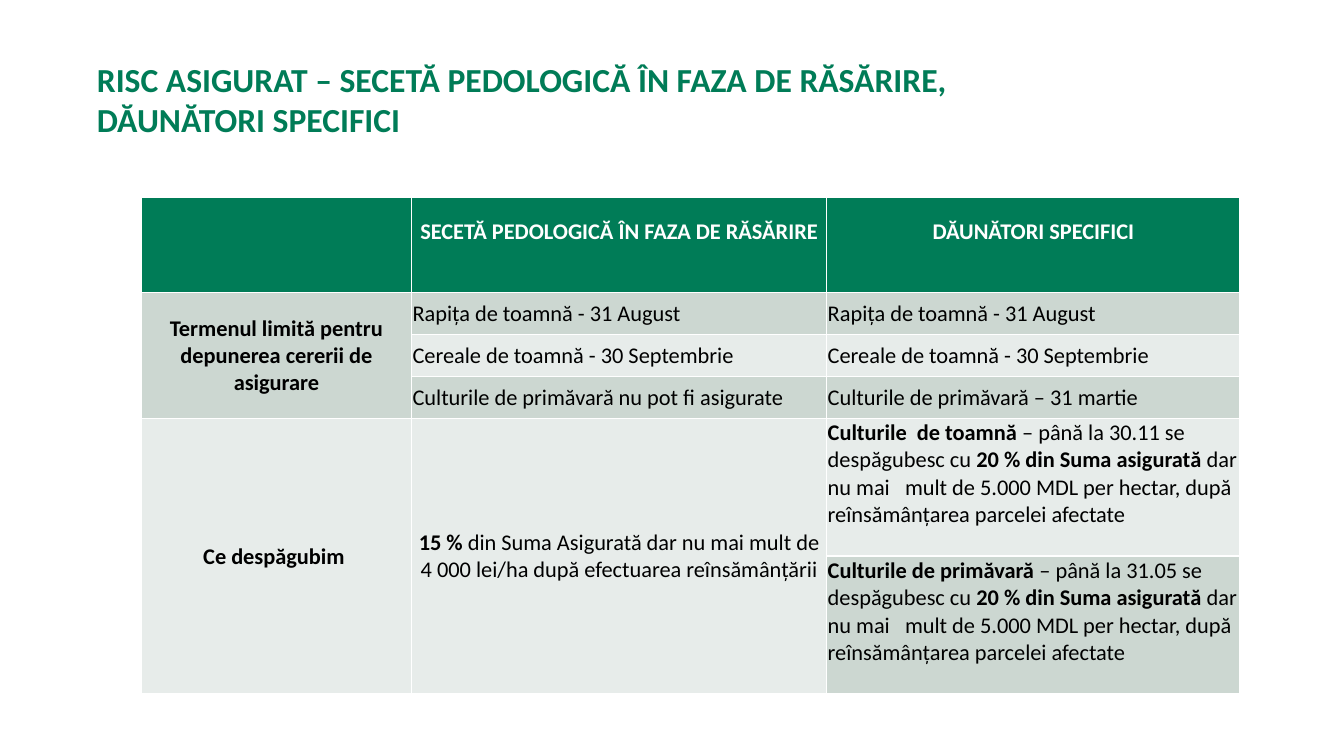
from dataclasses import dataclass

from pptx import Presentation
from pptx.dml.color import RGBColor
from pptx.enum.text import MSO_ANCHOR as Anchor, MSO_AUTO_SIZE as AutoSize, PP_ALIGN as Align
from pptx.util import Pt


@dataclass(frozen=True)
class Theme:
    font: str = "Calibri"
    green: RGBColor = RGBColor(0x00, 0x7C, 0x57)
    dark_band: RGBColor = RGBColor(0xCC, 0xD7, 0xD1)
    light_band: RGBColor = RGBColor(0xE7, 0xEC, 0xEA)
    white: RGBColor = RGBColor(0xFF, 0xFF, 0xFF)
    black: RGBColor = RGBColor(0x00, 0x00, 0x00)
    title_size: int = 24
    cell_size: int = 16


THEME = Theme()
TITLE = "RISC ASIGURAT – SECETĂ PEDOLOGICĂ ÎN FAZA DE RĂSĂRIRE, \vDĂUNĂTORI SPECIFICI"
COLUMN_WIDTHS = (193, 296.6, 295.2)
ROW_HEIGHTS = (68, 30, 30, 30, 98.4, 98.4)
LINE_GAP = 19.5

HEADERS = ("SECETĂ PEDOLOGICĂ ÎN FAZA DE RĂSĂRIRE", "DĂUNĂTORI SPECIFICI")
DEADLINES = (
    ("Rapița de toamnă - 31 August", "Rapița de toamnă - 31 August"),
    ("Cereale de toamnă - 30 Septembrie", "Cereale de toamnă - 30 Septembrie"),
    ("Culturile de primăvară nu pot fi asigurate", "Culturile de primăvară – 31 martie"),
)
DROUGHT_PAYOUT = (" **15 %** din Suma Asigurată dar nu mai mult de ",
                  "4 000 lei/ha după efectuarea reînsămânțării")
PEST_PAYOUTS = (("Culturile  de toamnă", "30.11"), ("Culturile de primăvară", "31.05"))


def add_text(p, text, *, size, color, bold=False, align=Align.LEFT):
    """Write text into a paragraph; ** switches bold on and off."""
    p.alignment = align
    for i, part in enumerate(text.split("**")):
        if not part:
            continue
        for j, line in enumerate(part.split("\v")):
            if j:
                p.add_line_break()
            r = p.add_run()
            r.text = line
            r.font.name = THEME.font
            r.font.size = Pt(size)
            r.font.bold = bold or i % 2 == 1
            r.font.color.rgb = color


def add_title(s, left, top, width, height):
    title = s.shapes.title
    title.left, title.top, title.width, title.height = map(Pt, (left, top, width, height))
    tf = title.text_frame
    tf.word_wrap = True
    tf.auto_size = AutoSize.NONE
    tf.vertical_anchor = Anchor.BOTTOM
    tf.margin_bottom = Pt(10)
    p = tf.paragraphs[0]
    p.line_spacing = 1.0
    add_text(p, TITLE, size=THEME.title_size, color=THEME.green, bold=True)


def fill_cell(cell, *lines, fill, color=THEME.black, gap_below=0, **text_format):
    cell.fill.solid()
    cell.fill.fore_color.rgb = fill
    cell.vertical_anchor = Anchor.MIDDLE
    cell.margin_left = cell.margin_right = cell.margin_top = Pt(0.7)
    cell.margin_bottom = Pt(gap_below)
    tf = cell.text_frame
    for i, line in enumerate(lines):
        p = tf.add_paragraph() if i else tf.paragraphs[0]
        add_text(p, line, size=THEME.cell_size, color=color, **text_format)


def add_risk_table(s, left, top):
    frame = s.shapes.add_table(len(ROW_HEIGHTS), len(COLUMN_WIDTHS), Pt(left), Pt(top),
                               Pt(sum(COLUMN_WIDTHS)), Pt(sum(ROW_HEIGHTS)))
    table = frame.table
    for column, width in zip(table.columns, COLUMN_WIDTHS):
        column.width = Pt(width)
    for row, height in zip(table.rows, ROW_HEIGHTS):
        row.height = Pt(height)
    cell = table.cell
    cell(1, 0).merge(cell(3, 0))
    cell(4, 0).merge(cell(5, 0))
    cell(4, 1).merge(cell(5, 1))
    heading = dict(bold=True, align=Align.CENTER)
    bands = (THEME.light_band, THEME.dark_band)

    fill_cell(cell(0, 0), fill=THEME.green)
    for c, text in enumerate(HEADERS, 1):
        fill_cell(cell(0, c), text, fill=THEME.green, color=THEME.white,
                  gap_below=LINE_GAP, **heading)

    fill_cell(cell(1, 0), "Termenul limită pentru depunerea cererii de asigurare",
              fill=THEME.dark_band, **heading)
    for r, deadlines in enumerate(DEADLINES, 1):
        for c, text in enumerate(deadlines, 1):
            fill_cell(cell(r, c), text, fill=bands[r % 2])

    fill_cell(cell(4, 0), "Ce despăgubim ", fill=THEME.light_band, **heading)
    fill_cell(cell(4, 1), *DROUGHT_PAYOUT, fill=THEME.light_band, align=Align.CENTER)
    for r, (crops, date) in enumerate(PEST_PAYOUTS, 4):
        text = (f"**{crops} **– până la {date} se despăgubesc cu **20 % din Suma asigurată **"
                "dar nu mai   mult de 5.000 MDL per hectar, după reînsămânțarea parcelei afectate")
        fill_cell(cell(r, 2), text, fill=bands[r % 2], gap_below=LINE_GAP)


def main():
    prs = Presentation()
    prs.slide_width, prs.slide_height = Pt(960), Pt(540)
    s = prs.slides.add_slide(prs.slide_layouts[5])
    add_title(s, 62, 64, 863, 45.4)
    add_risk_table(s, 101, 140.8)
    prs.save("out.pptx")


if __name__ == "__main__":
    main()
